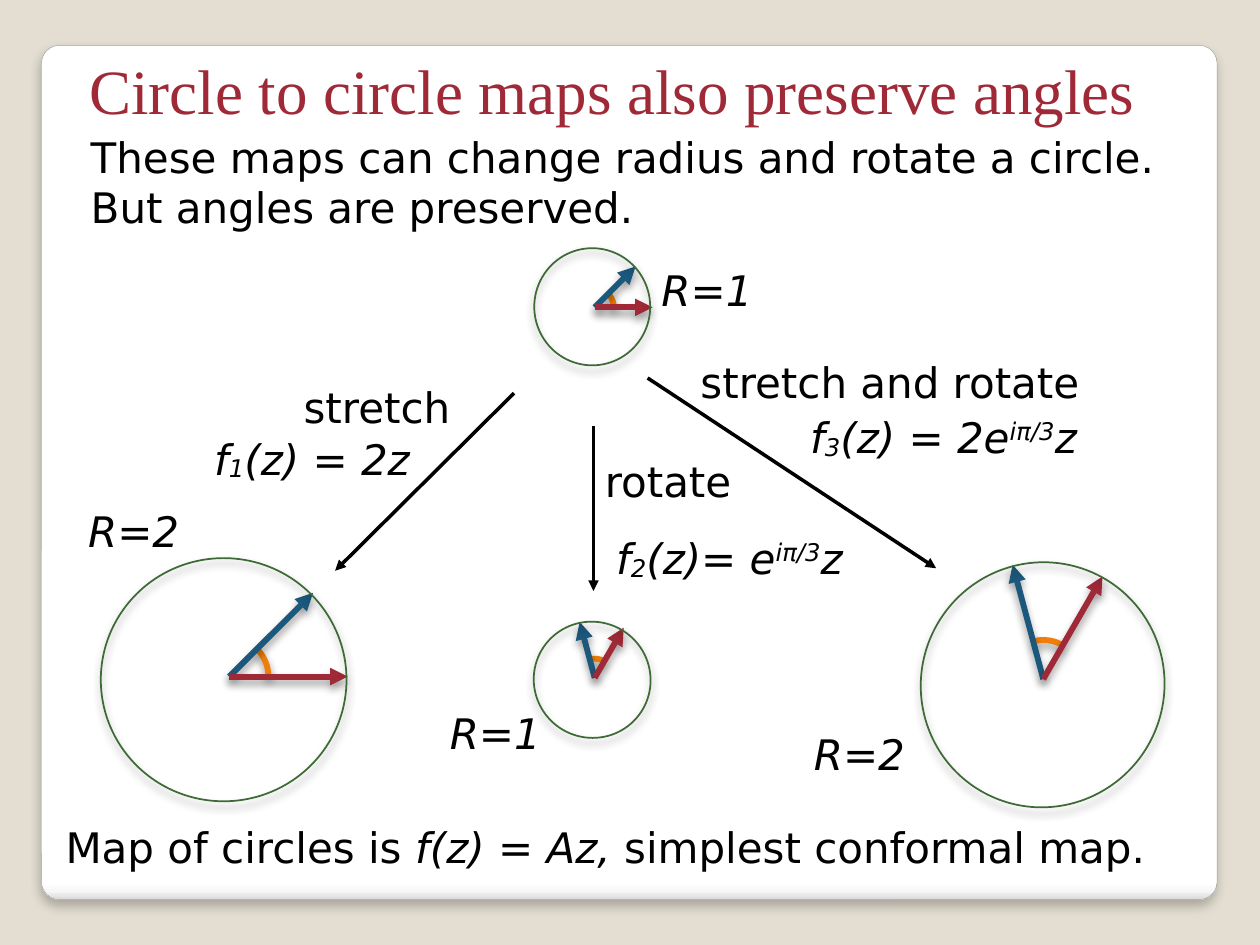
from math import cos, radians, sin

from lxml.etree import SubElement
from pptx import Presentation
from pptx.dml.color import RGBColor
from pptx.enum.shapes import MSO_CONNECTOR as Connector, MSO_SHAPE as Shape
from pptx.enum.text import MSO_ANCHOR as Anchor, MSO_AUTO_SIZE as AutoSize, PP_ALIGN as Align
from pptx.oxml.ns import qn
from pptx.util import Inches, Pt

COLORS = {
    "page": "E3DED1", "panel_line": "A2A1A1", "title": "9F2936", "text": "000000",
    "circle": "3E6A35", "angle": "F07F09", "first": "9F2936", "second": "1B587C",
}
PANEL_STOPS = [(0, "FFFFFF"), (98, "FFFFFF"), (99, "F7F7F7"), (100, "D9D9D9")]
FONT, TITLE_FONT = "DejaVu Sans", "Times New Roman"

# Content: a run is (text, italic, baseline in percent)
TITLE = "Circle to circle maps also preserve angles"
INTRO = ["These maps can change radius and rotate a circle.", "But angles are preserved."]


def plain(text):
    return [(text, False, 0)]


def math(*parts):
    return [(text, True, base) for text, base in parts]


LABELS = [  # left, top, width, height, runs
    (1.65, 3.39, 1.74, 0.5, math(("f", 0), ("1", -6), ("(z) = 2z", 0))),
    (6.38, 3.22, 2.39, 0.5, math(("f", 0), ("3", -6), ("(z) = 2e", 0), ("iπ/3", 32), ("z", 0))),
    (4.84, 4.18, 2.06, 0.5, math(("f", 0), ("2", -6), ("(z)= e", 0), ("iπ/3", 32), ("z", 0))),
    (5.2, 2.05, 0.83, 0.5, math(("R=1", 0))),
    (0.65, 3.96, 0.83, 0.5, math(("R=2", 0))),
    (3.52, 5.57, 0.83, 0.5, math(("R=1", 0))),
    (6.41, 5.73, 0.83, 0.5, math(("R=2", 0))),
    (5.51, 2.78, 3.13, 0.5, plain("stretch and rotate")),
    (2.36, 2.98, 1.39, 1.31, plain("stretch")),
    (4.75, 3.57, 1.12, 0.5, plain("rotate")),
    (0.47, 6.47, 8.79, 0.5, plain("Map of circles is") + math((" f(z) = Az, ", 0))
     + plain("simplest conformal map.")),
]
MAP_ARROWS = [((4.08, 3.12), (2.66, 4.53)), ((4.71, 3.38), (4.71, 4.69)), ((5.14, 3), (7.43, 4.51))]

# Circle diagrams: circle left, top, width, height; arrow origin, arrow length, turn in degrees
DIAGRAMS = [
    ((0.8, 4.43, 1.95, 1.93), (1.82, 5.37), 0.94, 0),
    ((4.24, 1.97, 0.92, 0.93), (4.72, 2.44), 0.46, 0),
    ((4.24, 4.93, 0.92, 0.93), (4.72, 5.38), 0.46, 60),
    ((7.3, 4.47, 1.95, 1.93), (8.28, 5.39), 0.94, 60),
]
ANGLE = 45
ARC_SHARE = 0.33  # arc radius as a share of arrow length


def color(name):
    return RGBColor.from_string(COLORS[name])


def set_line(shape, name, width):
    shape.line.color.rgb = color(name)
    shape.line.width = Pt(width)


def set_shadow(shape, opacity=0, blur=0, distance=0):
    """Replace the theme shadow; no opacity means no shadow."""
    effects = SubElement(shape._element.spPr, qn("a:effectLst"))
    if opacity:
        shadow = SubElement(effects, qn("a:outerShdw"), blurRad=str(Pt(blur)), dist=str(Pt(distance)),
                            dir="5400000", algn="ctr", rotWithShape="0")
        black = SubElement(shadow, qn("a:srgbClr"), val="000000")
        SubElement(black, qn("a:alpha"), val=str(opacity * 1000))


def add_arrow(start, end, name, width, shadow=()):
    arrow = page.shapes.add_connector(Connector.STRAIGHT, *map(Inches, (*start, *end)))
    set_line(arrow, name, width)
    SubElement(arrow.line._get_or_add_ln(), qn("a:tailEnd"), type="triangle")
    set_shadow(arrow, *shadow)


def place(shape, left, top, width, height):
    shape.left, shape.top, shape.width, shape.height = map(Inches, (left, top, width, height))


def set_frame(frame):
    frame.word_wrap = False
    frame.auto_size = AutoSize.SHAPE_TO_FIT_TEXT
    frame.vertical_anchor = Anchor.TOP
    frame.margin_left = frame.margin_right = frame.margin_top = frame.margin_bottom = Inches(0.05)


def format_run(span, size=24, font=FONT, name="text"):
    span.font.size, span.font.name = Pt(size), font
    span.font.color.rgb = color(name)


def polar(origin, radius, degrees):
    return (origin[0] + radius * cos(radians(degrees)), origin[1] - radius * sin(radians(degrees)))


deck = Presentation()
deck.slide_width, deck.slide_height = Inches(10), Inches(7.5)
page = deck.slides.add_slide(deck.slide_layouts[1])
page.background.fill.solid()
page.background.fill.fore_color.rgb = color("page")

# White panel, behind everything
panel = page.shapes.add_shape(Shape.ROUNDED_RECTANGLE, *map(Inches, (0.33, 0.36, 9.33, 6.78)))
panel.adjustments[0] = 0.021
panel.fill.gradient()
panel.fill.gradient_angle = 270
stops = panel._element.spPr.find(qn("a:gradFill")).find(qn("a:gsLst"))
for stop in list(stops):
    stops.remove(stop)
for position, value in PANEL_STOPS:
    stop = SubElement(stops, qn("a:gs"), pos=str(position * 1000))
    SubElement(stop, qn("a:srgbClr"), val=value)
set_line(panel, "panel_line", 0.25)
set_shadow(panel, 25, 6, 4)
page.shapes._spTree.insert(2, panel._element)

# Title and introduction
title, intro = page.shapes.title, page.placeholders[1]
place(title, 0.65, 0.36, 8.42, 0.66)
title.text_frame.text = TITLE
set_frame(title.text_frame)
title.text_frame.paragraphs[0].alignment = Align.CENTER
format_run(title.text_frame.paragraphs[0].runs[0], 36, TITLE_FONT, "title")

place(intro, 0.67, 0.99, 8.69, 0.91)
intro.text_frame.text = "\n".join(INTRO)
set_frame(intro.text_frame)
for para in intro.text_frame.paragraphs:
    para.space_before = Pt(0)
    properties = para._p.get_or_add_pPr()
    properties.set("marL", "0")
    properties.set("indent", "0")
    SubElement(properties, qn("a:buNone"))
    format_run(para.runs[0])

# Arrows from the unit circle to its images
for start, end in MAP_ARROWS:
    add_arrow(start, end, "text", 2)

# Circles, each with two arrows and the angle between them
SOFT = (40, 5, 3)
for bounds, origin, length, turn in DIAGRAMS:
    points = [polar(origin, length * ARC_SHARE, turn + ANGLE * step / 12) for step in range(13)]
    points = [(Inches(x), Inches(y)) for x, y in points]
    builder = page.shapes.build_freeform(*points[0])
    builder.add_line_segments(points[1:], close=False)
    arc = builder.convert_to_shape()
    arc.fill.background()
    set_line(arc, "angle", 3.35)
    set_shadow(arc, *SOFT)
    add_arrow(origin, polar(origin, length, turn + ANGLE), "second", 3.35, SOFT)
    add_arrow(origin, polar(origin, length, turn), "first", 3.35, SOFT)
    circle = page.shapes.add_shape(Shape.OVAL, *map(Inches, bounds))
    circle.rotation = -turn % 360
    circle.fill.background()
    set_line(circle, "circle", 1)
    set_shadow(circle, *SOFT)

# Labels and formulas
for *bounds, runs in LABELS:
    box = page.shapes.add_textbox(*map(Inches, bounds))
    set_frame(box.text_frame)
    for text, italic, base in runs:
        span = box.text_frame.paragraphs[0].add_run()
        span.text = text
        format_run(span)
        span.font.italic = italic
        if base:
            span.font._element.set("baseline", str(base * 1000))

deck.save("out.pptx")
